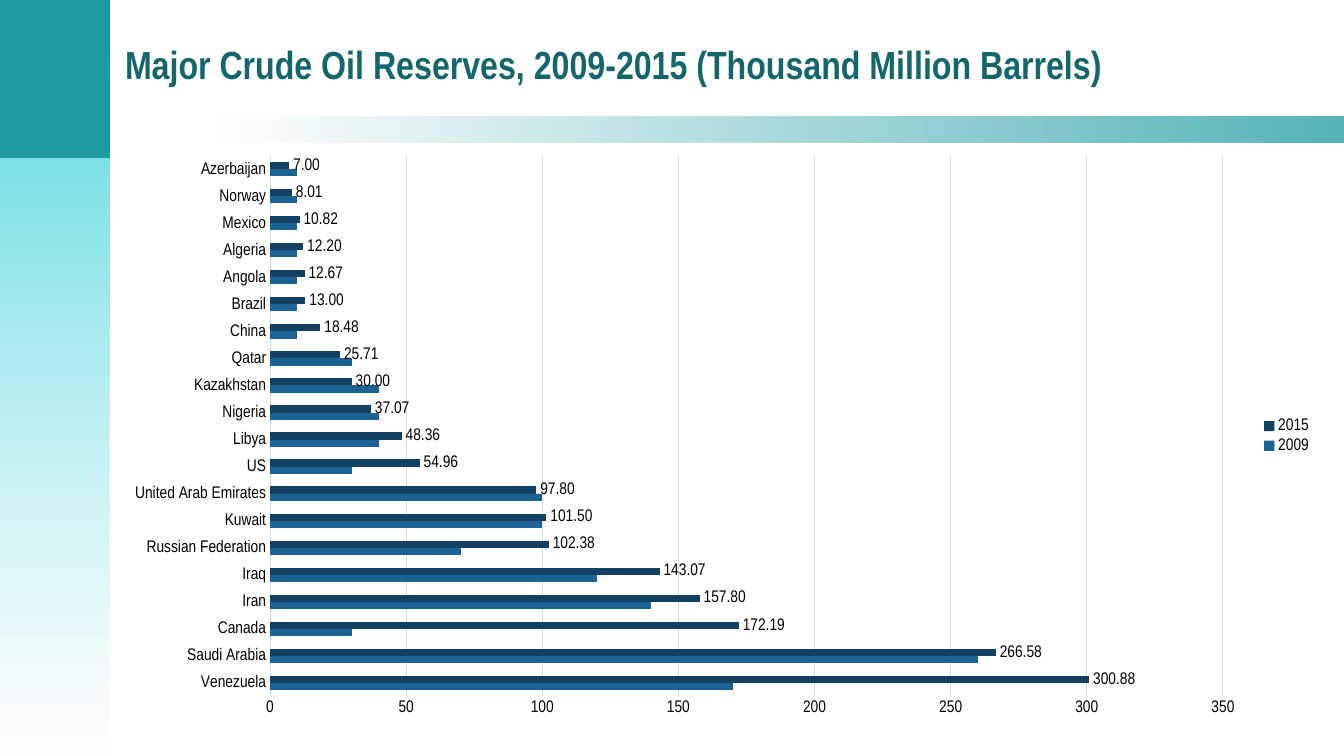
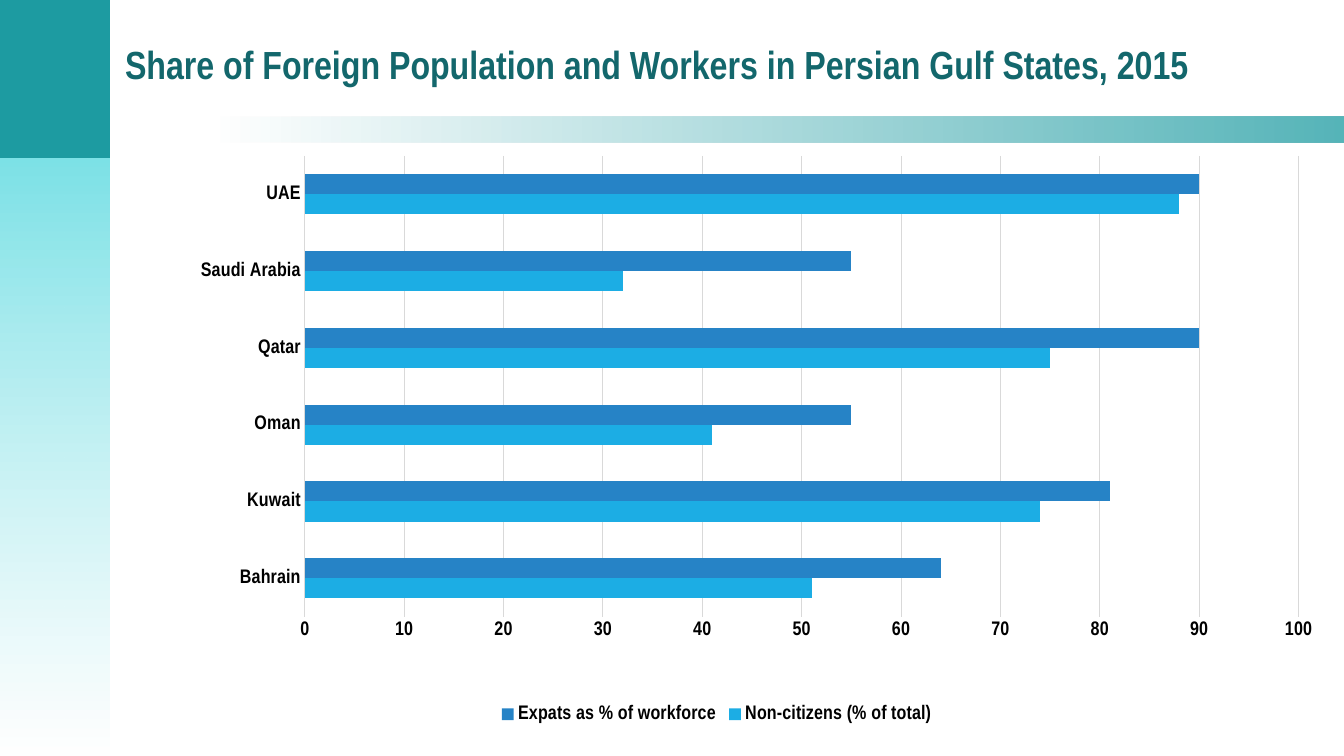
from pptx import Presentation
from pptx.chart.data import CategoryChartData
from pptx.dml.color import RGBColor
from pptx.enum.chart import (XL_CHART_TYPE, XL_LABEL_POSITION,
                             XL_LEGEND_POSITION, XL_TICK_MARK)
from pptx.enum.shapes import MSO_SHAPE
from pptx.enum.text import MSO_ANCHOR, MSO_AUTO_SIZE, PP_ALIGN
from pptx.oxml import parse_xml
from pptx.oxml.ns import nsdecls, qn
from pptx.util import Pt

PX = 9144  # 100 px to the inch
WIDE, HIGH = 1333, 750
FONT = "Arial Narrow"
TEAL, AQUA, WHITE, BLACK = "1D9BA1", "7DE2E7", "FFFFFF", "000000"
HEAD, GRID = "13676C", "D9D9D9"
TITLE = (114, 11, 1197, 104)
CHART = (110, 143, 1202, 579)
# box, angle counted anticlockwise, colour stops with opacity in percent
BANDS = [
    ((-2, -1, 111, 158), 0, [(TEAL, 100)]),
    ((-2, 157, 111, 593), 270, [(AQUA, 100), (WHITE, 75)]),
    ((209, 116, 1125, 25), 0, [(WHITE, 75), (TEAL, 75)]),
]

RESERVES = [
    ("Venezuela", 170, 300.88), ("Saudi Arabia", 260, 266.58),
    ("Canada", 30, 172.19), ("Iran", 140, 157.8), ("Iraq", 120, 143.07),
    ("Russian Federation", 70, 102.38), ("Kuwait", 100, 101.5),
    ("United Arab Emirates", 100, 97.8), ("US", 30, 54.96),
    ("Libya", 40, 48.36), ("Nigeria", 40, 37.07), ("Kazakhstan", 40, 30),
    ("Qatar", 30, 25.71), ("China", 10, 18.48), ("Brazil", 10, 13),
    ("Angola", 10, 12.67), ("Algeria", 10, 12.2), ("Mexico", 10, 10.82),
    ("Norway", 10, 8.01), ("Azerbaijan", 10, 7),
]
SHARES = [
    ("Bahrain", 51, 64), ("Kuwait", 74, 81), ("Oman", 41, 55),
    ("Qatar", 75, 90), ("Saudi Arabia", 32, 55), ("UAE", 88, 90),
]


def rgb(code):
    return RGBColor.from_string(code)


def emu(box):
    return [n * PX for n in box]


def style(font, size, color=BLACK, bold=False):
    font.name, font.size, font.bold = FONT, Pt(size), bold
    font.color.rgb = rgb(color)


def add_band(slide, box, angle, stops):
    band = slide.shapes.add_shape(MSO_SHAPE.RECTANGLE, *emu(box))
    band.shadow.inherit = False
    band.line.fill.background()
    if len(stops) == 1:
        band.fill.solid()
        band.fill.fore_color.rgb = rgb(stops[0][0])
        return band
    band.fill.gradient()
    band.fill.gradient_angle = angle
    for stop, (color, _) in zip(band.fill.gradient_stops, stops):
        stop.color.rgb = rgb(color)
    marks = band.element.spPr.iter(qn("a:srgbClr"))
    for mark, (_, alpha) in zip(marks, stops):
        mark.append(parse_xml(
            f'<a:alpha {nsdecls("a")} val="{alpha * 1000}"/>'))
    return band


def set_master(deck, slide):
    """Draw the bands on a slide and move them to the master's back."""
    tree = deck.slide_master.shapes.element
    for i, args in enumerate(BANDS):
        item = add_band(slide, *args).element
        item.nvSpPr.cNvPr.set("id", str(20 + i))
        tree.insert(2 + i, item)


def add_title(slide, text, box):
    title = slide.shapes.title
    title.left, title.top, title.width, title.height = emu(box)
    frame = title.text_frame
    frame.text = text
    frame.auto_size = MSO_AUTO_SIZE.NONE
    frame.vertical_anchor = MSO_ANCHOR.MIDDLE
    line = frame.paragraphs[0]
    line.alignment = PP_ALIGN.LEFT
    style(line.runs[0].font, 28, HEAD, True)


def set_plot(chart, x, y, w, h):
    """Fix the inner plot area, in fractions of the chart."""
    area = chart.element.find(".//" + qn("c:plotArea"))
    for old in area.findall(qn("c:layout")):
        area.remove(old)
    parts = "".join(f'<c:{tag} val="{val}"/>' for tag, val in (
        ("layoutTarget", "inner"), ("xMode", "edge"), ("yMode", "edge"),
        ("x", x), ("y", y), ("w", w), ("h", h)))
    area.insert(0, parse_xml(
        f'<c:layout {nsdecls("c")}><c:manualLayout>{parts}'
        '</c:manualLayout></c:layout>'))


def set_axes(chart, top, step):
    cat, val = chart.category_axis, chart.value_axis
    for axis in (cat, val):
        axis.major_tick_mark = axis.minor_tick_mark = XL_TICK_MARK.NONE
    val.has_major_gridlines = True
    val.minimum_scale, val.maximum_scale, val.major_unit = 0, top, step
    val.format.line.fill.background()
    for line in (cat.format.line, val.major_gridlines.format.line):
        line.color.rgb = rgb(GRID)
        line.width = Pt(0.75)


def add_bars(slide, box, rows, series, size, bold, top, step, side):
    """Add a bar chart; series holds (name, colour) for each value column."""
    data = CategoryChartData()
    names, *cols = zip(*rows)
    data.categories = names
    for (name, _), vals in zip(series, cols):
        data.add_series(name, vals)
    chart = slide.shapes.add_chart(
        XL_CHART_TYPE.BAR_CLUSTERED, *emu(box), data).chart
    chart.has_title = False
    style(chart.font, size, bold=bold)
    set_axes(chart, top, step)
    chart.has_legend = True
    chart.legend.position = side
    chart.legend.include_in_layout = False
    plot = chart.plots[0]
    plot.gap_width, plot.overlap = 182, 0
    plot.vary_by_categories = False
    for bar, (_, color) in zip(plot.series, series):
        bar.invert_if_negative = False
        bar.format.fill.solid()
        bar.format.fill.fore_color.rgb = rgb(color)
    return chart


def add_labels(bar, size):
    labels = bar.data_labels
    labels.show_value = True
    labels.number_format = "#,##0.00"
    labels.number_format_is_linked = False
    labels.position = XL_LABEL_POSITION.OUTSIDE_END
    style(labels.font, size)


def fill_oil(slide):
    add_title(slide, "Major Crude Oil Reserves, 2009-2015 "
              "(Thousand Million Barrels)", TITLE)
    chart = add_bars(slide, CHART, RESERVES,
                     [("2009", "1D6294"), ("2015", "134163")],
                     12, False, 350, 50, XL_LEGEND_POSITION.RIGHT)
    add_labels(chart.plots[0].series[1], 12)


def fill_gulf(slide):
    add_title(slide, "Share of Foreign Population and Workers in "
              "Persian Gulf States, 2015", TITLE)
    chart = add_bars(slide, CHART, SHARES,
                     [("Non-citizens (% of total)", "1CADE4"),
                      ("Expats as % of workforce", "2683C6")],
                     14, True, 100, 10, XL_LEGEND_POSITION.BOTTOM)
    set_plot(chart, 0.16, 0.02, 0.82, 0.79)


def main():
    deck = Presentation()
    deck.slide_width, deck.slide_height = emu((WIDE, HIGH))
    layout = deck.slide_layouts[5]
    oil, gulf = (deck.slides.add_slide(layout) for _ in range(2))
    set_master(deck, oil)
    fill_oil(oil)
    fill_gulf(gulf)
    deck.save("out.pptx")


if __name__ == "__main__":
    main()
